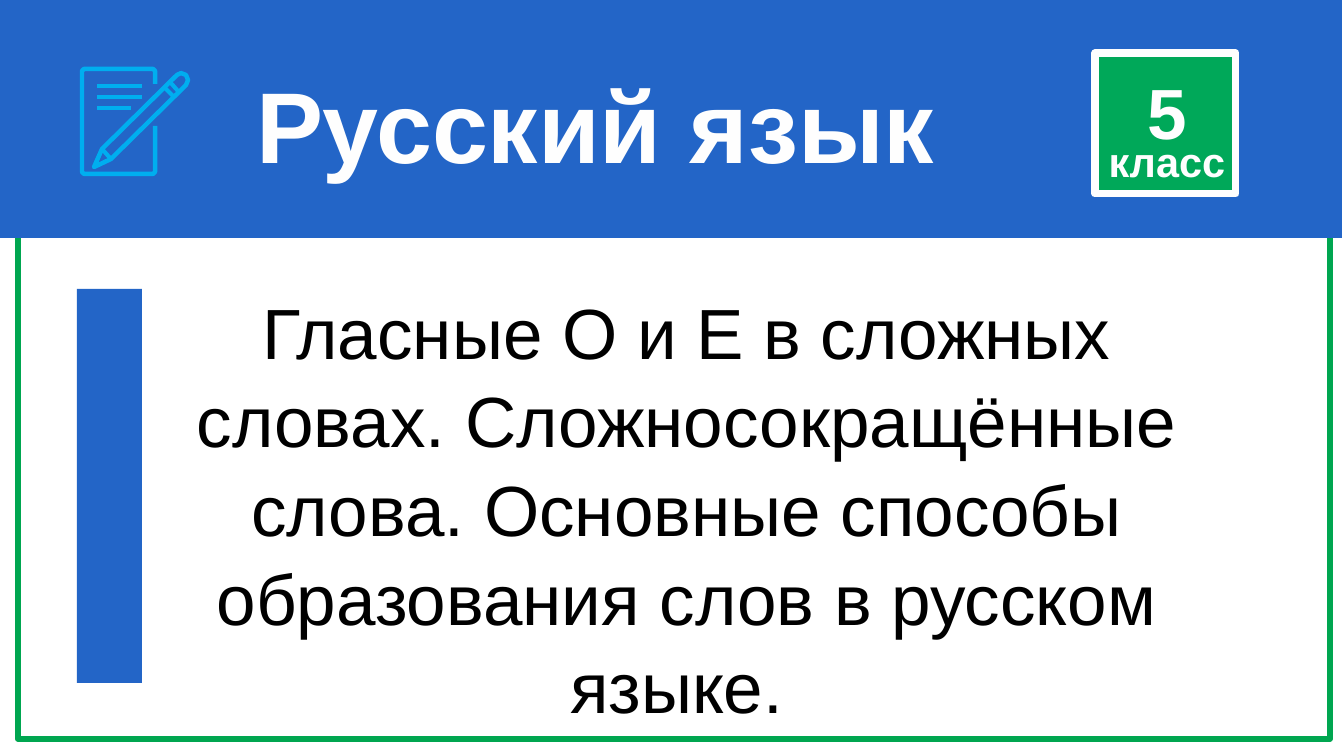
from pptx import Presentation
from pptx.util import Pt
from pptx.dml.color import RGBColor
from pptx.enum.shapes import MSO_SHAPE, MSO_CONNECTOR
from pptx.enum.text import PP_ALIGN, MSO_ANCHOR, MSO_AUTO_SIZE
from pptx.oxml.ns import qn
from lxml import etree

RECT, LINE = MSO_SHAPE.RECTANGLE, MSO_CONNECTOR.STRAIGHT
LEFT, MID = PP_ALIGN.LEFT, PP_ALIGN.CENTER
TOP, FIXED = MSO_ANCHOR.TOP, MSO_AUTO_SIZE.NONE

PX = 4293  # EMU in one px, 213 px to the inch
HEX = {"blue": "2365C7", "frame": "00A650", "badge": "00A859",
       "sky": "00AEEF", "white": "FEFEFE", "black": "000000"}
RGB = {name: RGBColor.from_string(code) for name, code in HEX.items()}


def stroke(item, color, width):
    item.line.color.rgb = RGB[color]
    item.line.width = Pt(width)


def write(item, box, text, size, color, bold, align, pad):
    item.left, item.top, item.width, item.height = [v * PX for v in box]
    frame = item.text_frame
    look = {"word_wrap": True, "auto_size": FIXED, "vertical_anchor": TOP,
            "margin_left": pad * PX, "margin_right": pad * PX,
            "margin_top": 0, "margin_bottom": 0}
    for key, val in look.items():
        setattr(frame, key, val)
    para = frame.paragraphs[0]
    para.alignment = align
    para.space_before = Pt(0)
    run = para.add_run()
    run.text = text
    for key, val in {"name": "Arial", "size": Pt(size), "bold": bold}.items():
        setattr(run.font, key, val)
    run.font.color.rgb = RGB[color]
    return para


deck = Presentation()
deck.slide_width, deck.slide_height = 1344 * PX, 756 * PX
slide = deck.slides.add_slide(deck.slide_layouts[1])
shapes = slide.shapes
title, body = slide.placeholders

# Frame, header band, side bar and class badge
blocks = [
    ((18, 129, 1312, 610), None, "frame", 2),
    ((0, 0, 1342, 238), "blue", None, 0),
    ((77, 289, 65, 394), "blue", None, 0),
    ((1095, 53, 141, 141), "badge", "white", 2.4),
]
for box, fill, edge, width in blocks:
    block = shapes.add_shape(RECT, *[v * PX for v in box])
    block.shadow.inherit = False
    if fill:
        block.fill.solid()
        block.fill.fore_color.rgb = RGB[fill]
    else:
        block.fill.background()
    if edge:
        stroke(block, edge, width)
    else:
        block.line.fill.background()

# Icon outlines: sheet and pencil
sheet = [(155, 84), (155, 71), (153, 69), (84, 69), (82, 71), (82, 172),
         (84, 174), (153, 174), (155, 172), (155, 126)]
pencil = [(94, 167), (102, 149), (177, 75), (181, 73), (186, 75),
          (188, 80), (186, 85), (111, 159)]
for points, closed in [(sheet, False), (pencil, True)]:
    path = shapes.build_freeform(*points[0], scale=PX)
    path.add_line_segments(points[1:], close=closed)
    part = path.convert_to_shape()
    part.shadow.inherit = False
    part.fill.background()
    stroke(part, "sky", 1.5)

# Icon strokes: text rows, then pencil bands
rows = [(97, 86 + 11 * i, end, 86 + 11 * i)
        for i, end in enumerate([142, 142, 131])]
bands = [(102, 149, 111, 159), (165, 88, 173, 96), (170, 82, 178, 91)]
for ends in rows + bands:
    dash = shapes.add_connector(LINE, *[v * PX for v in ends])
    stroke(dash, "sky", 1.4)
    etree.SubElement(dash._element.spPr, qn("a:effectLst"))

# Badge text
for box, text, size in [((1095, 68, 144, 90), "5", 24),
                        ((1095, 136, 144, 54), "класс", 14)]:
    label = shapes.add_textbox(0, 0, 0, 0)
    write(label, box, text, size, "white", True, MID, 0)

# Title and topic, brought in front of the band
for item in (title, body):
    shapes._spTree.append(item._element)
write(title, (256, 63, 805, 126), "Русский язык", 34, "white", True, LEFT, 0)
topic = write(
    body, (138, 285, 1097, 440),
    "Гласные О и Е в сложных словах. Сложносокращённые слова. "
    "Основные способы образования слов в русском языке. ",
    24, "black", False, MID, 21)
topic.line_spacing = 1.04
props = topic._p.get_or_add_pPr()
for key in ("marL", "indent"):
    props.set(key, "0")
etree.SubElement(props, qn("a:buNone"))

deck.save("out.pptx")
